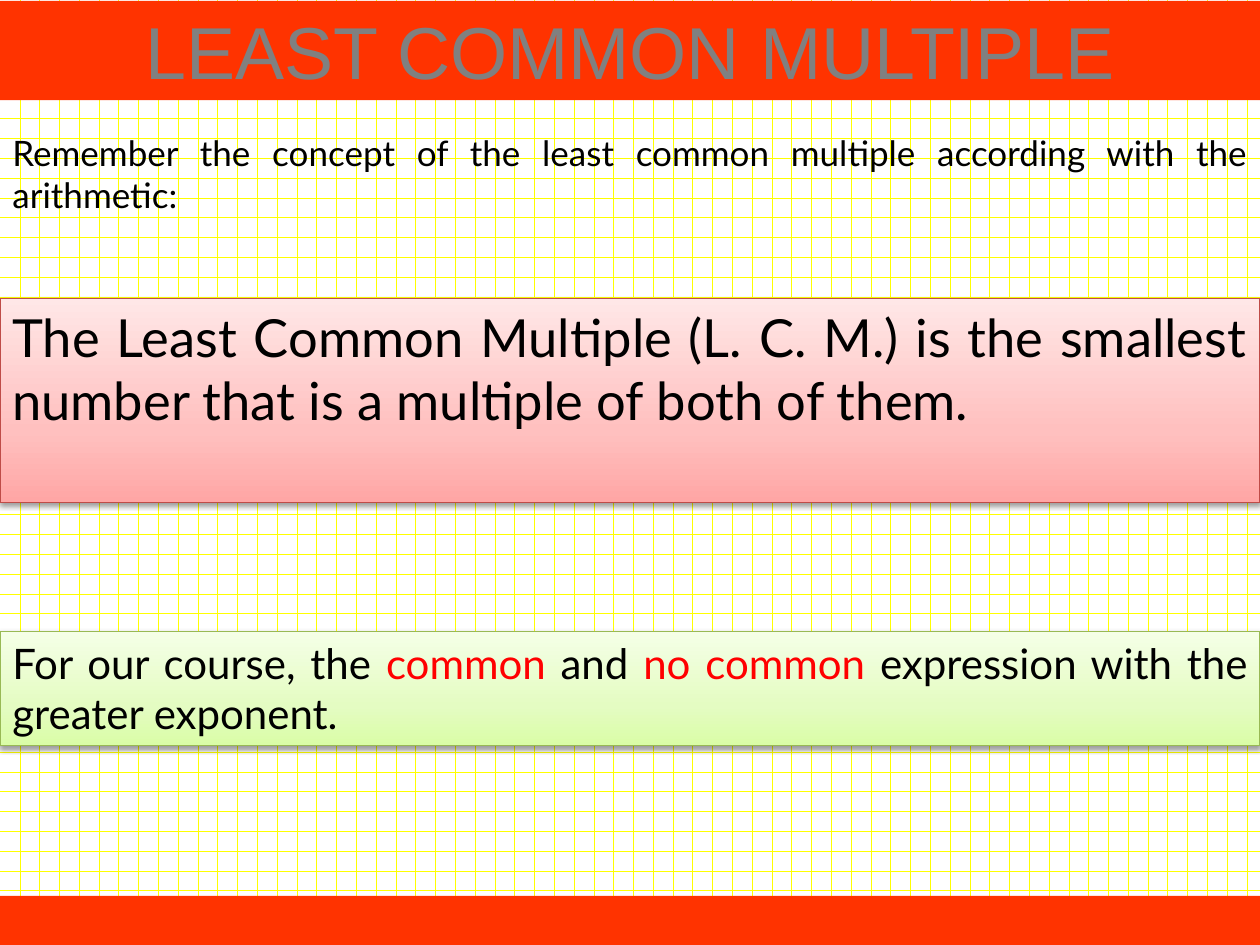
from copy import deepcopy

from lxml import etree
from pptx import Presentation
from pptx.dml.color import RGBColor
from pptx.enum import dml, shapes, text
from pptx.oxml import parse_xml
from pptx.oxml.ns import nsdecls, qn
from pptx.util import Pt

ORANGE = RGBColor(0xFF, 0x33, 0x00)
GRAY = RGBColor(0x80, 0x80, 0x80)
BLACK = RGBColor(0, 0, 0)
WHITE = RGBColor(0xFF, 0xFF, 0xFF)
RED = RGBColor(0xFF, 0, 0)
YELLOW = RGBColor(0xFF, 0xFF, 0)
ROSE_LINE = RGBColor(0xBF, 0x4C, 0x48)
GREEN_LINE = RGBColor(0x98, 0xB9, 0x55)
ROSE_STOPS = [RGBColor.from_string(c) for c in ("FFA6A5", "FFC0BF", "FFE7E7")]
GREEN_STOPS = [RGBColor.from_string(c) for c in ("DAFDA7", "E4FCC2", "F5FFE7")]
STOP_POSITIONS = (0, 0.35, 1)

WIDTH, HEIGHT = 720, 540


def place(shape, box):
    shape.left, shape.top, shape.width, shape.height = map(Pt, box)


def paint_background(page):
    fill = page.background.fill
    fill.patterned()
    fill.pattern = dml.MSO_PATTERN.DOTTED_GRID
    fill.fore_color.rgb = YELLOW
    fill.back_color.rgb = WHITE


def add_title(page, box):
    title = page.shapes.title
    place(title, box)
    title.fill.solid()
    title.fill.fore_color.rgb = ORANGE
    frame = title.text_frame
    frame.text = "LEAST COMMON MULTIPLE"
    frame.auto_size = text.MSO_AUTO_SIZE.NONE
    frame.vertical_anchor = text.MSO_ANCHOR.MIDDLE
    paragraph = frame.paragraphs[0]
    paragraph.alignment = text.PP_ALIGN.CENTER
    span = paragraph.runs[0]
    span.font.size, span.font.name = Pt(42), "Arial"
    span.font.color.rgb = GRAY
    outline = parse_xml(
        f'<a:ln {nsdecls("a")} w="{Pt(0.75)}"><a:solidFill>'
        f'<a:srgbClr val="{WHITE}"/></a:solidFill></a:ln>')
    span.font._element.insert(0, outline)


def add_footer(page, box):
    footer = page.shapes.add_shape(shapes.MSO_SHAPE.RECTANGLE, *map(Pt, box))
    footer.shadow.inherit = False
    footer.fill.solid()
    footer.fill.fore_color.rgb = ORANGE
    footer.line.fill.background()


def write_statement(shape, size, parts):
    """Fill the shape with one justified paragraph of (words, colour) parts."""
    frame = shape.text_frame
    frame.word_wrap = True
    frame.vertical_anchor = text.MSO_ANCHOR.TOP
    paragraph = frame.paragraphs[0]
    paragraph.alignment = text.PP_ALIGN.JUSTIFY
    for words, color in parts:
        span = paragraph.add_run()
        span.text = words
        span.font.size, span.font.name = Pt(size), "Lato"
        span.font.color.rgb = color


def add_intro(page, box, size, parts):
    write_statement(page.shapes.add_textbox(*map(Pt, box)), size, parts)


def add_gradient(shape, colors):
    shape.fill.gradient()
    shape.fill.gradient_angle = 90
    stop_list = next(shape.element.spPr.iter(qn("a:gsLst")))
    stop_list.append(deepcopy(stop_list[-1]))
    for stop, color, position in zip(
            shape.fill.gradient_stops, colors, STOP_POSITIONS):
        stop.color.rgb = color
        stop.position = position


def add_drop_shadow(shape):
    shape.shadow.inherit = False
    effects = shape.element.spPr.find(qn("a:effectLst"))
    shadow = etree.SubElement(
        effects, qn("a:outerShdw"), blurRad=str(Pt(3.1)), dist=str(Pt(1.6)),
        dir="5400000", rotWithShape="0")
    color = etree.SubElement(shadow, qn("a:srgbClr"), val=str(BLACK))
    etree.SubElement(color, qn("a:alpha"), val="38000")


def add_panel(page, box, colors, line_color, size, parts):
    panel = page.shapes.add_shape(shapes.MSO_SHAPE.RECTANGLE, *map(Pt, box))
    add_gradient(panel, colors)
    panel.line.color.rgb = line_color
    panel.line.width = Pt(0.75)
    add_drop_shadow(panel)
    write_statement(panel, size, parts)


def main():
    deck = Presentation()
    deck.slide_width, deck.slide_height = Pt(WIDTH), Pt(HEIGHT)
    page = deck.slides.add_slide(deck.slide_layouts[5])
    paint_background(page)
    add_footer(page, (0, 512, WIDTH, 28))
    add_title(page, (0, 0.5, WIDTH, 56.7))
    add_intro(page, (0, 71.5, WIDTH, 55.5), 20, [
        ("Remember the concept of the least common multiple according "
         "with the arithmetic:", BLACK)])
    add_panel(page, (0, 170.5, WIDTH, 116.5), ROSE_STOPS, ROSE_LINE, 30, [
        ("The Least Common Multiple (L. C. M.) is the smallest number "
         "that is a multiple of both of them.", BLACK)])
    add_panel(page, (0, 360.7, WIDTH, 65.3), GREEN_STOPS, GREEN_LINE, 24, [
        ("For our course, the ", BLACK),
        ("common", RED),
        (" and ", BLACK),
        ("no common ", RED),
        ("expression with the greater exponent.", BLACK)])
    deck.save("out.pptx")


if __name__ == "__main__":
    main()
